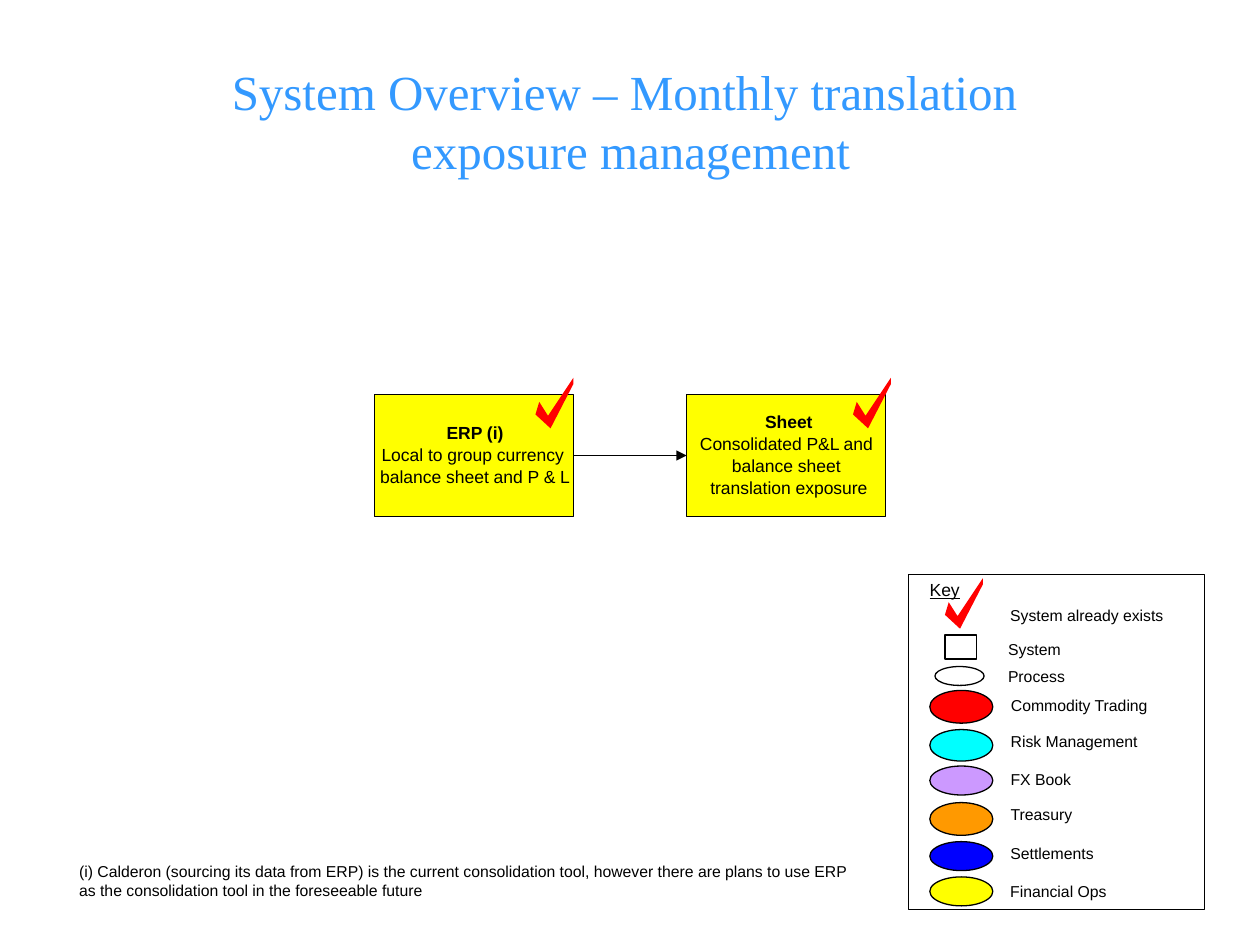
import pptx
import pptx.util
import pptx.dml.color
import pptx.enum.shapes
import pptx.enum.text
import lxml.etree
from pptx.util import Inches

SHAPE = pptx.enum.shapes.MSO_SHAPE
ALIGN = pptx.enum.text.PP_ALIGN
ANCHOR = pptx.enum.text.MSO_ANCHOR
FIT = pptx.enum.text.MSO_AUTO_SIZE


def paint(fill, colour):
    """Give a shape, line or font fill a solid hex colour."""
    fill.solid()
    fill.fore_color.rgb = pptx.dml.color.RGBColor.from_string(colour)


def add_label(shapes, text, left, top, width, height, size=9, align=ALIGN.CENTER, inset=True):
    """Add a one-paragraph Arial label and return its text frame."""
    if align == ALIGN.CENTER:
        # Room on both sides keeps each centred label on one line
        left, width = left - 0.05, width + 0.1
    box = shapes.add_textbox(Inches(left), Inches(top), Inches(width), Inches(height))
    frame = box.text_frame
    frame.word_wrap = False
    frame.auto_size = FIT.SHAPE_TO_FIT_TEXT
    if not inset:
        frame.margin_left = frame.margin_right = frame.margin_top = frame.margin_bottom = 0
    frame.text = text
    para = frame.paragraphs[0]
    para.alignment = align
    para.font.size = pptx.util.Pt(size)
    for span in para.runs:
        span.font.name = "Arial"
        span.font.size = pptx.util.Pt(size)
        paint(span.font.fill, "000000")
    return frame


deck = pptx.Presentation()
deck.slide_width, deck.slide_height = Inches(10), Inches(7.5)
page = deck.slides.add_slide(deck.slide_layouts[5])

# Title
title = page.shapes.title
title.left, title.top = Inches(-0.33), Inches(0.33)
title.width, title.height = Inches(10.67), Inches(1.25)
title.text_frame.text = "System Overview – Monthly translation \vexposure management"
title.text_frame.vertical_anchor = ANCHOR.MIDDLE
title.text_frame.auto_size = FIT.NONE
title.text_frame.paragraphs[0].alignment = ALIGN.CENTER
for span in title.text_frame.paragraphs[0].runs:
    span.font.name = "Times New Roman"
    span.font.size = pptx.util.Pt(28)
    paint(span.font.fill, "3399FF")

# System boxes, each with a bold heading and centred lines of text
systems = [
    (2.97, 3.77, 3.35, [("ERP (i)", 0.45), ("Local to group currency ", 1.48),
                        ("balance sheet and P & L", 1.51)]),
    (5.45, 6.26, 3.26, [("Sheet", 0.41), ("Consolidated P&L and ", 1.42),
                        ("balance sheet ", 0.9), ("translation exposure", 1.25)]),
]
boxes = []
for left, centre, top, lines in systems:
    box = page.shapes.add_shape(SHAPE.RECTANGLE, Inches(left), Inches(3.13), Inches(1.58), Inches(0.97))
    box.shadow.inherit = False
    paint(box.fill, "FFFF00")
    paint(box.line.fill, "000000")
    box.line.width = 0
    boxes.append(box)
    for row, (line, width) in enumerate(lines):
        frame = add_label(page.shapes, line, centre - width / 2, top + row * 0.175, width, 0.17,
                          size=10, inset=False)
        frame.paragraphs[0].runs[0].font.bold = row == 0

# Arrow between the systems
arrow = page.shapes.add_connector(pptx.enum.shapes.MSO_CONNECTOR.STRAIGHT,
                                  Inches(4.55), Inches(3.62), Inches(5.45), Inches(3.62))
arrow.begin_connect(boxes[0], 3)
arrow.end_connect(boxes[1], 1)
paint(arrow.line.fill, "000000")
arrow.line.width = pptx.util.Pt(0.75)
namespace = "{http://schemas.openxmlformats.org/drawingml/2006/main}"
lxml.etree.SubElement(arrow.line._get_or_add_ln(), namespace + "tailEnd", type="triangle")
lxml.etree.SubElement(arrow._element.spPr, namespace + "effectLst")

# Key: frame and heading
key = page.shapes.add_group_shape().shapes
border = key.add_shape(SHAPE.RECTANGLE, Inches(7.21), Inches(4.56), Inches(2.35), Inches(2.66))
border.shadow.inherit = False
border.fill.background()
paint(border.line.fill, "000000")
border.line.width = 0
heading = add_label(key, "Key", 7.28, 4.59, 1.19, 0.17, size=10, align=ALIGN.LEFT)
heading.word_wrap = True
heading.auto_size = FIT.NONE
heading.vertical_anchor = ANCHOR.MIDDLE
heading.paragraphs[0].runs[0].font.underline = True

# Key: symbols
symbols = [
    (SHAPE.OVAL, 7.38, 5.48, 0.5, 0.26, "FF0000", 0.75),
    (SHAPE.OVAL, 7.38, 5.79, 0.5, 0.25, "00FFFF", 0.75),
    (SHAPE.OVAL, 7.38, 6.08, 0.5, 0.23, "CC99FF", 0.75),
    (SHAPE.OVAL, 7.38, 6.37, 0.5, 0.26, "FF9900", 0.75),
    (SHAPE.OVAL, 7.38, 6.68, 0.5, 0.23, "0000FF", 0.75),
    (SHAPE.OVAL, 7.38, 6.96, 0.5, 0.23, "FFFF00", 0.75),
    (SHAPE.OVAL, 7.42, 5.29, 0.39, 0.15, "FFFFFF", 0),
    (SHAPE.RECTANGLE, 7.5, 5.04, 0.25, 0.19, "FFFFFF", 0),
]
for kind, left, top, width, height, colour, weight in symbols:
    symbol = key.add_shape(kind, Inches(left), Inches(top), Inches(width), Inches(height))
    symbol.shadow.inherit = False
    paint(symbol.fill, colour)
    paint(symbol.line.fill, "000000")
    symbol.line.width = pptx.util.Pt(weight)

# Key: meanings
meanings = [
    ("System already exists", 4.76, 1.41),
    ("Commodity Trading", 5.47, 1.29),
    ("Risk Management", 5.76, 1.21),
    ("FX Book", 6.06, 0.68),
    ("Treasury", 6.34, 0.69),
    ("Settlements", 6.65, 0.86),
    ("Financial Ops", 6.95, 0.96),
]
for text, top, width in meanings:
    add_label(key, text, 7.92, top, width, 0.25)
add_label(key, "System", 8, 5.08, 0.42, 0.15, inset=False)
process = add_label(key, "Process", 8, 5.29, 0.78, 0.15, align=ALIGN.LEFT, inset=False)
process.word_wrap = True

# Red ticks on both systems and in the key
tick_points = [(0.03, 0.19), (0, 0.29), (0.12, 0.4), (0.3, 0.05), (0.3, 0), (0.1, 0.3)]
for shapes, left, top in [(page.shapes, 4.25, 3), (page.shapes, 6.77, 3), (key, 7.5, 4.59)]:
    corners = [(Inches(left + x), Inches(top + y)) for x, y in tick_points]
    outline = shapes.build_freeform(*corners[0])
    outline.add_line_segments(corners[1:], close=True)
    tick = outline.convert_to_shape()
    tick.shadow.inherit = False
    paint(tick.fill, "FF0000")
    tick.line.fill.background()

# Footnote
add_label(page.shapes,
          "(i) Calderon (sourcing its data from ERP) is the current consolidation tool, "
          "however there are plans to use ERP \vas the consolidation tool in the foreseeable future",
          0.53, 6.79, 6.5, 0.4, align=ALIGN.LEFT)

deck.save("out.pptx")
